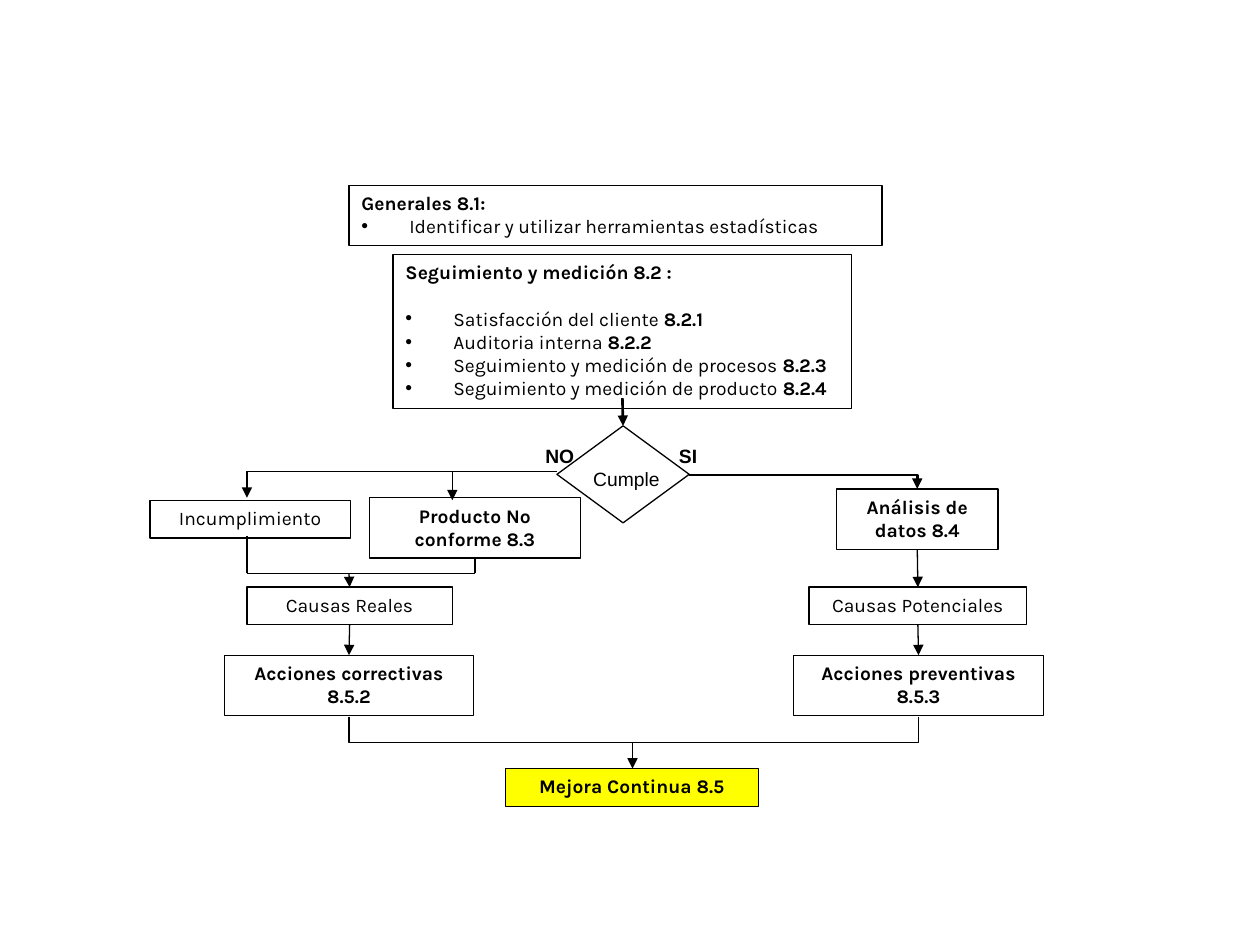
from dataclasses import dataclass

from lxml.etree import SubElement
from pptx import Presentation
from pptx.dml.color import RGBColor
from pptx.enum.shapes import MSO_CONNECTOR as Link, MSO_SHAPE as Preset
from pptx.enum.text import MSO_ANCHOR as Anchor, MSO_AUTO_SIZE as AutoSize, PP_ALIGN as Align
from pptx.oxml.ns import qn
from pptx.shapes.autoshape import Shape
from pptx.shapes.connector import Connector
from pptx.util import Inches, Pt

BLACK = RGBColor(0x00, 0x00, 0x00)
WHITE = RGBColor(0xFF, 0xFF, 0xFF)
YELLOW = RGBColor(0xFF, 0xFF, 0x00)

COLUMNS, ROWS = 100, 75
TOP, LEFT, BOTTOM, RIGHT = range(4)
THIN, THICK = 0.75, 1.5
HANGING = Inches(0.38)
ONE_LINE, TWO_LINES = 3, 4.8

prs = Presentation()
prs.slide_width, prs.slide_height = Inches(10), Inches(7.5)
slide = prs.slides.add_slide(prs.slide_layouts[6])
shapes = slide.shapes


@dataclass(frozen=True)
class Area:
    col: float
    row: float
    cols: float
    rows: float

    def emu(self) -> tuple[int, int, int, int]:
        return x(self.col), y(self.row), x(self.cols), y(self.rows)


@dataclass(frozen=True)
class Step:
    area: Area
    label: str
    bold: bool = True
    fill: RGBColor = WHITE


@dataclass(frozen=True)
class Item:
    label: str
    clause: str = ""


@dataclass(frozen=True)
class Requirement:
    area: Area
    heading: str
    items: tuple[Item, ...]
    gap: float = 0


def x(col: float) -> int:
    return round(prs.slide_width * col / COLUMNS)


def y(row: float) -> int:
    return round(prs.slide_height * row / ROWS)


def format_run(run, bold: bool, face: str = "Karla") -> None:
    run.font.name, run.font.size = face, Pt(11)
    run.font.bold = bold
    run.font.color.rgb = BLACK


def draw_outline(area: Area, preset=Preset.RECTANGLE, fill: RGBColor | None = WHITE) -> Shape:
    shape = shapes.add_shape(preset, *area.emu())
    shape.shadow.inherit = False
    if fill is None:
        shape.fill.background()
    else:
        shape.fill.solid()
        shape.fill.fore_color.rgb = fill
    shape.line.color.rgb, shape.line.width = BLACK, Pt(THIN)
    return shape


def draw_box(area: Area, fill: RGBColor = WHITE) -> Shape:
    box = draw_outline(area, fill=fill)
    frame = box.text_frame
    frame.word_wrap, frame.vertical_anchor = True, Anchor.TOP
    frame.auto_size = AutoSize.SHAPE_TO_FIT_TEXT
    return box


def draw_step(step: Step) -> Shape:
    box = draw_box(step.area, step.fill)
    box.text_frame.text = step.label
    paragraph = box.text_frame.paragraphs[0]
    paragraph.alignment = Align.CENTER
    format_run(paragraph.runs[0], step.bold)
    return box


def draw_requirement(requirement: Requirement) -> None:
    frame = draw_box(requirement.area).text_frame
    frame.text = requirement.heading
    heading = frame.paragraphs[0]
    heading.alignment, heading.space_after = Align.LEFT, Pt(requirement.gap)
    format_run(heading.runs[0], True)
    for item in requirement.items:
        paragraph = frame.add_paragraph()
        paragraph.alignment = Align.LEFT
        properties = paragraph._p.get_or_add_pPr()
        properties.set("marL", str(HANGING))
        properties.set("indent", str(-HANGING))
        SubElement(properties, qn("a:buFont")).set("typeface", "Arial")
        SubElement(properties, qn("a:buChar")).set("char", "•")
        paragraph.font.size = Pt(11)
        for part, bold in ((item.label, False), (item.clause, True)):
            if part:
                run = paragraph.add_run()
                run.text = part
                format_run(run, bold)


def draw_caption(area: Area, caption: str, bold: bool) -> None:
    frame = shapes.add_textbox(*area.emu()).text_frame
    frame.word_wrap, frame.auto_size = False, AutoSize.SHAPE_TO_FIT_TEXT
    frame.text = caption
    format_run(frame.paragraphs[0].runs[0], bold, "Arial")


def draw_link(start: tuple[float, float], end: tuple[float, float], arrow: bool = True,
              weight: float = THIN, kind=Link.STRAIGHT) -> Connector:
    link = shapes.add_connector(kind, x(start[0]), y(start[1]), x(end[0]), y(end[1]))
    link.line.color.rgb, link.line.width = BLACK, Pt(weight)
    if arrow:
        SubElement(link.line._get_or_add_ln(), qn("a:tailEnd")).set("type", "triangle")
    SubElement(link._element.spPr, qn("a:effectLst"))
    return link


def draw_vertical_elbow(start: tuple[float, float], end: tuple[float, float], arrow: bool) -> None:
    """Leave and arrive vertically: an elbow laid out sideways, then turned about its centre."""
    mid_col, mid_row = (start[0] + end[0]) / 2, (start[1] + end[1]) / 2
    half_drop, half_span = (end[1] - start[1]) / 2, abs(end[0] - start[0]) / 2
    rightward = end[0] > start[0]
    side = half_drop if rightward else -half_drop
    link = draw_link((mid_col + side, mid_row - half_span), (mid_col - side, mid_row + half_span),
                     arrow, kind=Link.ELBOW)
    turn = 270 if rightward else 90
    link._element.spPr.find(qn("a:xfrm")).set("rot", str(turn * 60000))


def join(upper: Shape, lower: Shape) -> None:
    link = draw_link((0, 0), (0, 1))
    link.begin_connect(upper, BOTTOM)
    link.end_connect(lower, TOP)


REQUIREMENTS = (
    Requirement(Area(27.7, 14.7, 42.3, TWO_LINES), "Generales 8.1:",
                (Item("Identificar y utilizar herramientas estadísticas"),)),
    Requirement(Area(31.2, 20.2, 36.4, 12.2), "Seguimiento y medición 8.2 :", (
        Item("Satisfacción del cliente ", "8.2.1"),
        Item("Auditoria interna ", "8.2.2"),
        Item("Seguimiento y medición de procesos ", "8.2.3"),
        Item("Seguimiento y medición de producto ", "8.2.4")), gap=13.1),
)
for requirement in REQUIREMENTS:
    draw_requirement(requirement)

nonconforming = draw_step(Step(Area(29.3, 39.5, 16.8, TWO_LINES), "Producto No conforme 8.3"))
draw_step(Step(Area(11.9, 39.7, 15.9, ONE_LINE), "Incumplimiento", bold=False))
real_causes = draw_step(Step(Area(19.6, 46.6, 16.3, ONE_LINE), "Causas Reales", bold=False))
corrective = draw_step(Step(Area(17.8, 52, 19.8, TWO_LINES), "Acciones correctivas 8.5.2"))
analysis = draw_step(Step(Area(66.4, 38.8, 12.8, TWO_LINES), "Análisis de datos 8.4"))
potential_causes = draw_step(Step(Area(64.2, 46.6, 17.3, ONE_LINE), "Causas Potenciales", bold=False))
preventive = draw_step(Step(Area(63, 52, 19.8, TWO_LINES), "Acciones preventivas 8.5.3"))
draw_step(Step(Area(40.1, 61, 20.1, ONE_LINE), "Mejora Continua 8.5", fill=YELLOW))

decision = draw_outline(Area(44.2, 33.8, 10.5, 7.7), Preset.FLOWCHART_DECISION, None)
draw_caption(Area(46.1, 36.6, 7.3, 2.8), "Cumple", False)
draw_caption(Area(52.9, 34.8, 3.8, 2.8), "SI", True)
draw_caption(Area(42.3, 34.8, 4.4, 2.8), "NO", True)

draw_link((49.4, 31.6), (49.4, 33.8), weight=THICK).end_connect(decision, TOP)
yes_branch = draw_link((54.7, 37.7), (72.8, 38.8), weight=THICK, kind=Link.ELBOW)
yes_branch._element.spPr.find(qn("a:prstGeom")).set("prst", "bentConnector2")

FAILURE, NO_ROW, MERGE_ROW = 19.6, 37.4, 45.5
draw_link((FAILURE, NO_ROW), (44.2, NO_ROW), arrow=False)
draw_link((FAILURE, NO_ROW), (FAILURE, 39.5))
draw_link((35.9, NO_ROW), (35.9, 39.7))
draw_link((FAILURE, 42.5), (FAILURE, MERGE_ROW), arrow=False)
draw_link((FAILURE, MERGE_ROW), (37.7, MERGE_ROW), arrow=False)
draw_link((37.7, 44.3), (37.7, MERGE_ROW), arrow=False).begin_connect(nonconforming, BOTTOM)
draw_link((27.7, MERGE_ROW), (27.7, 46.6)).end_connect(real_causes, TOP)

for upper, lower in ((real_causes, corrective), (analysis, potential_causes),
                     (potential_causes, preventive)):
    join(upper, lower)

IMPROVEMENT = (50.2, 61)
draw_vertical_elbow((27.7, 56.9), IMPROVEMENT, arrow=False)
draw_vertical_elbow((72.9, 56.9), IMPROVEMENT, arrow=True)

prs.save("out.pptx")
